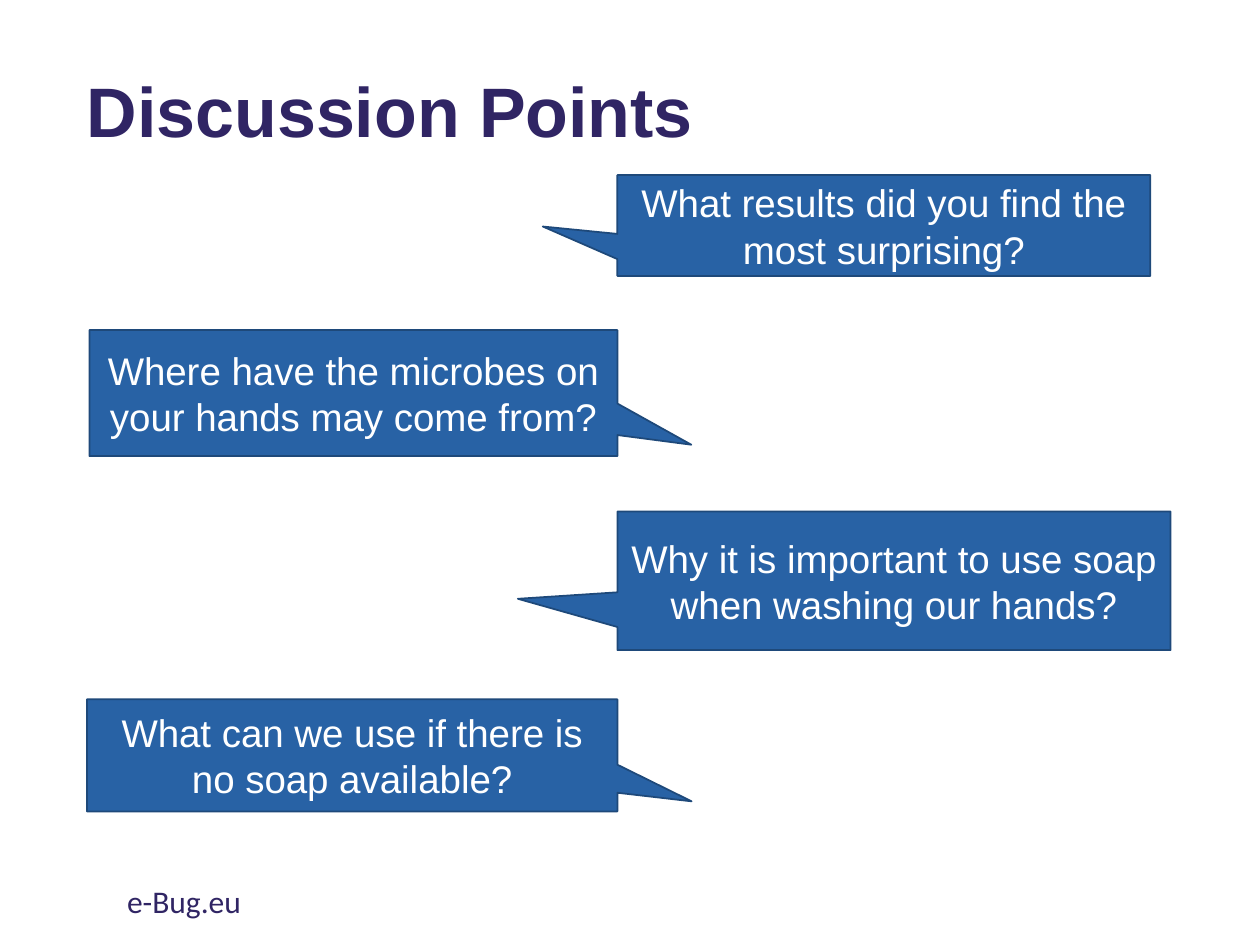
from pptx import Presentation
from pptx.dml.color import RGBColor as RGB
from pptx.enum.shapes import MSO_SHAPE as Shape
from pptx.enum.text import MSO_ANCHOR as Anchor, PP_ALIGN as Align
from pptx.util import Inches, Pt

COLORS = {"navy": "302564", "blue": "2862A5", "edge": "1E497A", "white": "FFFFFF"}


def write(shape, text, size, color, font="Arial"):
    frame = shape.text_frame
    frame.word_wrap = True
    para = frame.paragraphs[0]
    para.text = text
    para.font.size = Pt(size)
    para.font.name = font
    para.font.color.rgb = RGB.from_string(COLORS[color])
    return frame, para


deck = Presentation()
deck.slide_width, deck.slide_height = Inches(10), Inches(7.5)
slide = deck.slides.add_slide(deck.slide_layouts[6])
shapes = slide.shapes

# Title
title = shapes.add_textbox(Inches(0.59), Inches(0.43), Inches(8.62), Inches(0.96))
frame, para = write(title, "Discussion Points", 40, "navy")
frame.vertical_anchor = Anchor.MIDDLE
para.line_spacing = 0.9
para.font.bold = True

# Question callouts: left, top, width, height, pointer x and y, text
callouts = [
    (4.9, 1.39, 4.23, 0.8, -0.64, 0.01, "What results did you find the most surprising?"),
    (0.71, 2.62, 4.19, 1, 0.64, 0.41, "Where have the microbes on your hands may come from?"),
    (4.9, 4.06, 4.39, 1.1, -0.68, 0.13, "Why it is important to use soap when washing our hands?"),
    (0.69, 5.55, 4.21, 0.89, 0.64, 0.41, "What can we use if there is no soap available?"),
]
for left, top, width, height, tip_x, tip_y, text in callouts:
    box = shapes.add_shape(Shape.RECTANGULAR_CALLOUT, Inches(left), Inches(top),
                           Inches(width), Inches(height))
    box.adjustments[0], box.adjustments[1] = tip_x, tip_y
    box.shadow.inherit = False
    box.fill.solid()
    box.fill.fore_color.rgb = RGB.from_string(COLORS["blue"])
    box.line.color.rgb = RGB.from_string(COLORS["edge"])
    box.line.width = Pt(1)
    frame, para = write(box, text, 22, "white")
    frame.vertical_anchor = Anchor.MIDDLE
    para.alignment = Align.CENTER

# Footer
footer = shapes.add_textbox(Inches(0.91), Inches(6.95), Inches(3.38), Inches(0.4))
write(footer, "e-Bug.eu", 18, "navy", "Calibri")

deck.save("out.pptx")
